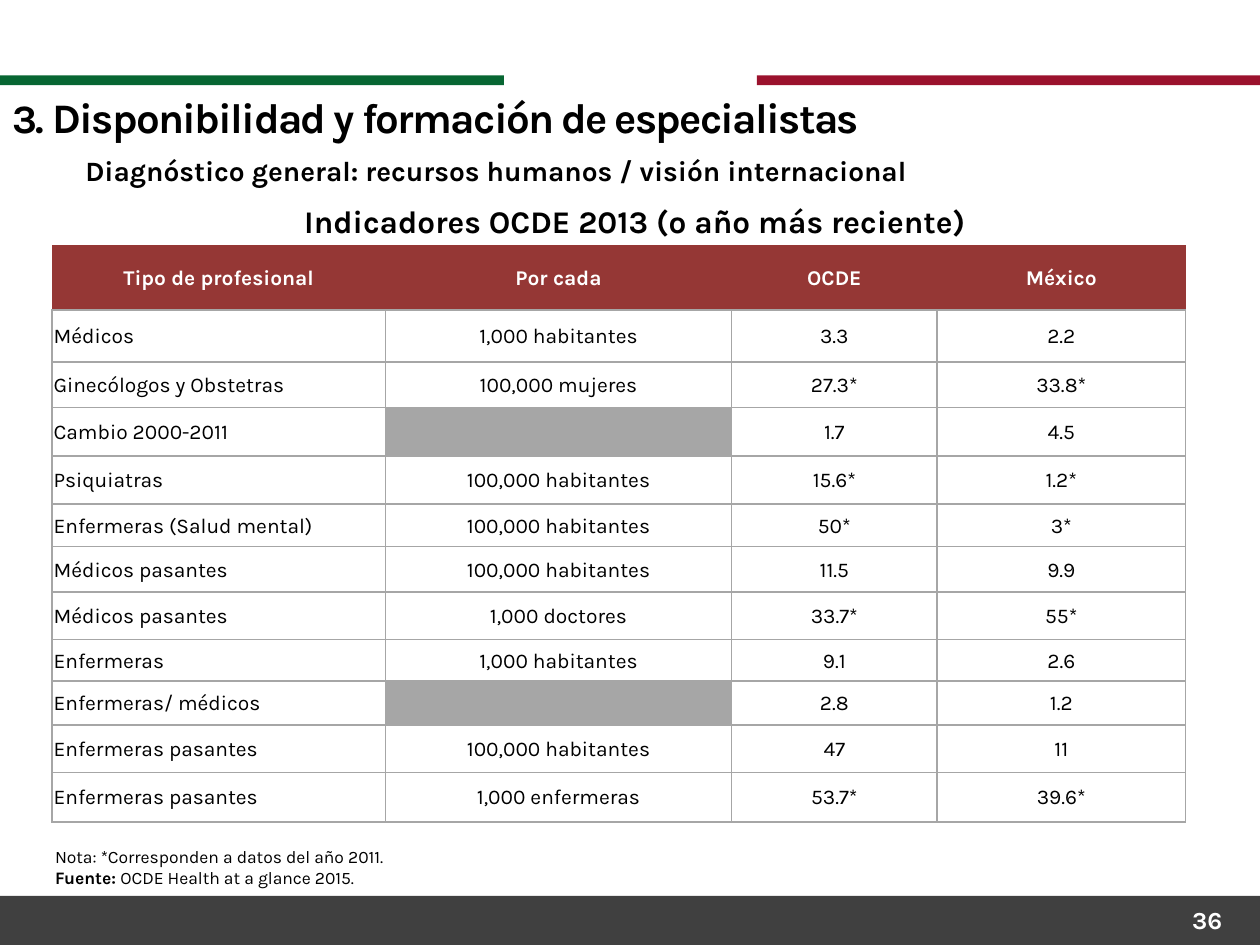
from dataclasses import dataclass

from lxml.etree import SubElement
from pptx import Presentation
from pptx.dml.color import RGBColor as RGB
from pptx.enum.shapes import MSO_SHAPE as Shape
from pptx.enum.text import MSO_ANCHOR as Anchor, PP_ALIGN as Align
from pptx.oxml.ns import qn
from pptx.util import Cm, Pt


@dataclass(frozen=True)
class Theme:
    face: str = "Karla"
    black: str = "000000"
    white: str = "FFFFFF"
    green: str = "076632"
    red: str = "9B122D"
    footer: str = "404040"
    header: str = "953735"
    grey: str = "A6A6A6"
    number_size: float = 23
    title_size: float = 24
    caption_size: float = 18
    subtitle_size: float = 16
    page_size: float = 14
    cell_size: float = 12
    note_size: float = 10


theme = Theme()
WIDTH, HEIGHT = 25.4, 19.05

TITLE = [("3. ", theme.number_size), ("Disponibilidad y formación de especialistas", theme.title_size)]
SUBTITLE = "Diagnóstico general: recursos humanos / visión internacional"
CAPTION = "Indicadores OCDE 2013 (o año más reciente)"
NOTE = "Nota: *Corresponden a datos del año 2011."
SOURCE = [("Fuente: ", True), ("OCDE Health at a glance 2015.", False)]
PAGE = "36"

BARS = [
    (0, 18.06, WIDTH, 0.99, theme.footer),
    (0, 1.52, 10.16, 0.2, theme.green),
    (15.26, 1.52, 10.14, 0.2, theme.red),
]

INDICATORS = [
    ("Tipo de profesional", "Por cada", "OCDE", "México"),
    ("Médicos", "1,000 habitantes", "3.3", "2.2"),
    ("Ginecólogos y Obstetras", "100,000 mujeres", "27.3*", "33.8*"),
    ("Cambio 2000-2011", "", "1.7", "4.5"),
    ("Psiquiatras", "100,000 habitantes", "15.6*", "1.2*"),
    ("Enfermeras (Salud mental)", "100,000 habitantes", "50*", "3*"),
    ("Médicos pasantes", "100,000 habitantes", "11.5", "9.9"),
    ("Médicos pasantes", "1,000 doctores", "33.7*", "55*"),
    ("Enfermeras", "1,000 habitantes", "9.1", "2.6"),
    ("Enfermeras/ médicos", "", "2.8", "1.2"),
    ("Enfermeras pasantes", "100,000 habitantes", "47", "11"),
    ("Enfermeras pasantes", "1,000 enfermeras", "53.7*", "39.6*"),
]
COLUMN_WIDTHS = [6.72, 6.98, 4.14, 5.01]
ROW_HEIGHTS = [1.32, 1.05, 0.91, 0.98, 0.97, 0.86, 0.91, 0.96, 0.84, 0.89, 0.95, 1.0]


def style(font, size, color=theme.black, bold=None):
    font.name, font.size, font.bold = theme.face, Pt(size), bold
    font.color.rgb = RGB.from_string(color)


def add_text(slide, place, lines, size, color=theme.black, bold=None, align=Align.LEFT):
    frame = slide.shapes.add_textbox(*map(Cm, place)).text_frame
    frame.word_wrap = True
    for index, line in enumerate(lines):
        paragraph = frame.paragraphs[0] if index == 0 else frame.add_paragraph()
        paragraph.text = line
        paragraph.alignment = align
        style(paragraph.font, size, color, bold)
    return frame


def add_bar(slide, left, top, width, height, color):
    bar = slide.shapes.add_shape(Shape.RECTANGLE, Cm(left), Cm(top), Cm(width), Cm(height))
    bar.shadow.inherit = False
    bar.fill.solid()
    bar.fill.fore_color.rgb = RGB.from_string(color)
    bar.line.fill.background()


def set_borders(cell, ruled_sides):
    properties = cell._tc.get_or_add_tcPr()
    for side in "LRTB":
        border = SubElement(properties, qn(f"a:ln{side}"), w=str(Pt(1)))
        if side in ruled_sides:
            fill = SubElement(border, qn("a:solidFill"))
            SubElement(fill, qn("a:srgbClr"), val=theme.grey)
        else:
            SubElement(border, qn("a:noFill"))


def fill_cell(cell, text, is_header, is_label):
    set_borders(cell, "B" if is_header else "LRTB")
    cell.fill.solid()
    background = theme.header if is_header else theme.white if text else theme.grey
    cell.fill.fore_color.rgb = RGB.from_string(background)
    cell.vertical_anchor = Anchor.MIDDLE
    cell.margin_left = cell.margin_right = cell.margin_top = Cm(0.03)
    cell.margin_bottom = 0
    paragraph = cell.text_frame.paragraphs[0]
    paragraph.text = text
    paragraph.alignment = Align.LEFT if is_label and not is_header else Align.CENTER
    style(paragraph.font, theme.cell_size, theme.white if is_header else theme.black, is_header)


def add_indicators(slide):
    place = (1.05, 4.93, sum(COLUMN_WIDTHS), sum(ROW_HEIGHTS))
    table = slide.shapes.add_table(len(ROW_HEIGHTS), len(COLUMN_WIDTHS), *map(Cm, place)).table
    table.horz_banding = False
    for column, width in zip(table.columns, COLUMN_WIDTHS):
        column.width = Cm(width)
    for row, height in zip(table.rows, ROW_HEIGHTS):
        row.height = Cm(height)
    for r, values in enumerate(INDICATORS):
        for c, value in enumerate(values):
            fill_cell(table.cell(r, c), value, r == 0, c == 0)


def main():
    deck = Presentation()
    deck.slide_width, deck.slide_height = Cm(WIDTH), Cm(HEIGHT)
    slide = deck.slides.add_slide(deck.slide_layouts[6])
    for bar in BARS:
        add_bar(slide, *bar)
    add_indicators(slide)
    add_text(slide, (1.5, 3.94, 22.6, 1.02), [CAPTION], theme.caption_size, bold=True, align=Align.CENTER)

    notes = add_text(slide, (0.86, 16.92, 24.03, 1.55), [NOTE, ""], theme.note_size)
    for text, bold in SOURCE:
        run = notes.paragraphs[1].add_run()
        run.text, run.font.bold = text, bold

    title = add_text(slide, (0, 1.73, WIDTH, 1.19), [""], theme.title_size, bold=True)
    for text, size in TITLE:
        run = title.paragraphs[0].add_run()
        run.text, run.font.size = text, Pt(size)
        run.font._element.set("spc", "-100")

    add_text(slide, (18.97, 18.11, 5.92, 0.94), [PAGE], theme.page_size, theme.white, True, Align.RIGHT)
    add_text(slide, (1.47, 2.97, 21.82, 0.94), [SUBTITLE], theme.subtitle_size, bold=True)
    deck.save("out.pptx")


if __name__ == "__main__":
    main()
